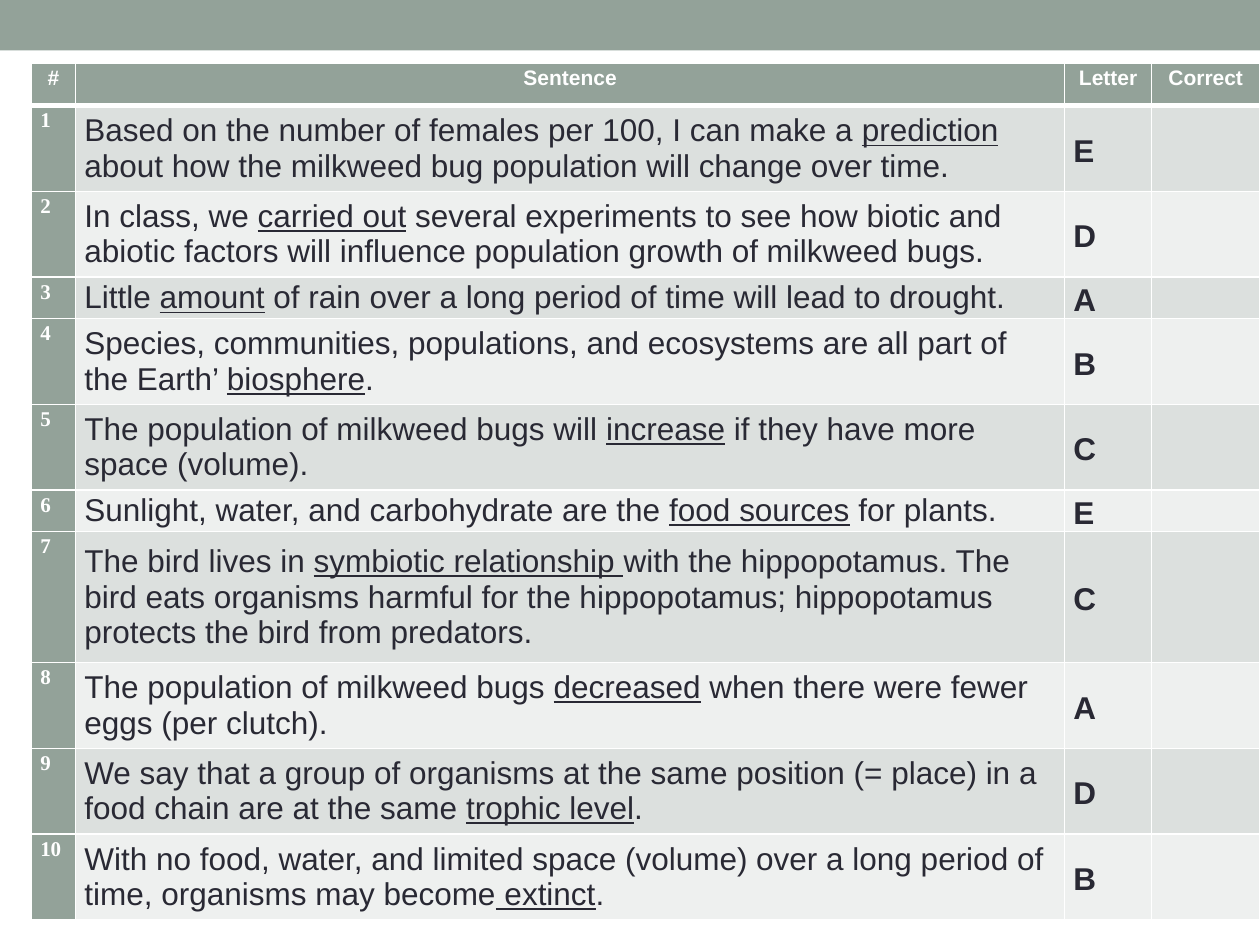
from lxml import etree
from pptx import Presentation
from pptx.dml.color import RGBColor
from pptx.enum.shapes import MSO_SHAPE
from pptx.enum.text import MSO_ANCHOR, PP_ALIGN
from pptx.oxml.ns import qn
from pptx.util import Inches, Pt

RECT = MSO_SHAPE.RECTANGLE
TOP, MIDDLE = MSO_ANCHOR.TOP, MSO_ANCHOR.MIDDLE
LEFT, CENTER, JUSTIFY = PP_ALIGN.LEFT, PP_ALIGN.CENTER, PP_ALIGN.JUSTIFY

THEME = {
    "sage": "93A299", "odd": "DCE0DE", "even": "EEF0EF",
    "white": "FFFFFF", "ink": "292934",
    "sans": "Arial", "serif": "Times New Roman",
    "small": 12, "large": 18, "line": 1, "thick": 3,
}
COLS = [0.35, 7.85, 0.69, 0.86]
HEAD_ROW = 0.34
LINE_ROW = {1: 0.33, 2: 0.68, 3: 1.04}
HEADS = ["#", "Sentence", "Letter", "Correct"]
ITEMS = [
    (2, "E", "Based on the number of females per 100, I can make a |prediction| about how the milkweed bug population will change over time."),
    (2, "D", "In class, we |carried out| several experiments to see how biotic and abiotic factors will influence population growth of milkweed bugs."),
    (1, "A", "Little |amount| of rain over a long period of time will lead to drought."),
    (2, "B", "Species, communities, populations, and ecosystems are all part of the Earth’ |biosphere|."),
    (2, "C", "The population of milkweed bugs will |increase| if they have more space (volume)."),
    (1, "E", "Sunlight, water, and carbohydrate are the |food sources| for plants."),
    (3, "C", "The bird lives in |symbiotic relationship |with the hippopotamus. The bird eats organisms harmful for the hippopotamus; hippopotamus protects the bird from predators."),
    (2, "A", "The population of milkweed bugs |decreased| when there were fewer eggs (per clutch)."),
    (2, "D", "We say that a group of organisms at the same position (= place) in a food chain are at the same |trophic level|."),
    (2, "B", "With no food, water, and limited space (volume) over a long period of time, organisms may become| extinct|."),
]


def write(cell, text, size="large", font="sans", color="ink", bold=False,
          align=LEFT, anchor=MIDDLE, lead=1.0, gap=0):
    cell.vertical_anchor = anchor
    para = cell.text_frame.paragraphs[0]
    para.alignment, para.line_spacing = align, lead
    para.space_before = para.space_after = Pt(gap)
    for i, part in enumerate(text.split("|")):
        run = para.add_run()
        run.text = part
        run.font.size = Pt(THEME[size])
        run.font.name = THEME[font]
        run.font.bold = bold
        run.font.underline = i % 2 == 1
        run.font.color.rgb = RGBColor.from_string(THEME[color])


def style(cell, fill, top="line", base="line"):
    cell.margin_left = cell.margin_right = Inches(0.07)
    cell.margin_top = cell.margin_bottom = 0
    props = cell._tc.get_or_add_tcPr()
    for side, width in (("L", "line"), ("R", "line"), ("T", top), ("B", base)):
        edge = etree.SubElement(props, qn("a:ln" + side), w=str(Pt(THEME[width])))
        paint = etree.SubElement(edge, qn("a:solidFill"))
        etree.SubElement(paint, qn("a:srgbClr"), val=THEME["white"])
    cell.fill.solid()
    cell.fill.fore_color.rgb = RGBColor.from_string(THEME[fill])


deck = Presentation()
deck.slide_width, deck.slide_height = Inches(10), Inches(7.5)
slide = deck.slides.add_slide(deck.slide_layouts[6])

band = slide.shapes.add_shape(RECT, 0, 0, deck.slide_width, Inches(0.4))
band.shadow.inherit = False
band.fill.solid()
band.fill.fore_color.rgb = RGBColor.from_string(THEME["sage"])
band.line.fill.background()

rows = [HEAD_ROW] + [LINE_ROW[lines] for lines, _, _ in ITEMS]
table = slide.shapes.add_table(
    len(rows), len(COLS), Inches(0.25), Inches(0.5),
    Inches(sum(COLS)), Inches(sum(rows))).table
for col, width in zip(table.columns, COLS):
    col.width = Inches(width)
for row, height in zip(table.rows, rows):
    row.height = Inches(height)

label = dict(size="small", color="white", bold=True, anchor=TOP, lead=1.15, gap=6)
for c, head in enumerate(HEADS):
    cell = table.cell(0, c)
    style(cell, "sage", base="thick")
    write(cell, head, align=CENTER, **label)

for r, (_, letter, text) in enumerate(ITEMS, 1):
    shade = "odd" if r % 2 else "even"
    for c in range(len(COLS)):
        style(table.cell(r, c), shade if c else "sage",
              top="thick" if r == 1 else "line")
    write(table.cell(r, 0), str(r), font="serif", align=JUSTIFY, **label)
    write(table.cell(r, 1), text, gap=3)
    write(table.cell(r, 2), letter, bold=True, lead=1.15)

deck.save("out.pptx")
